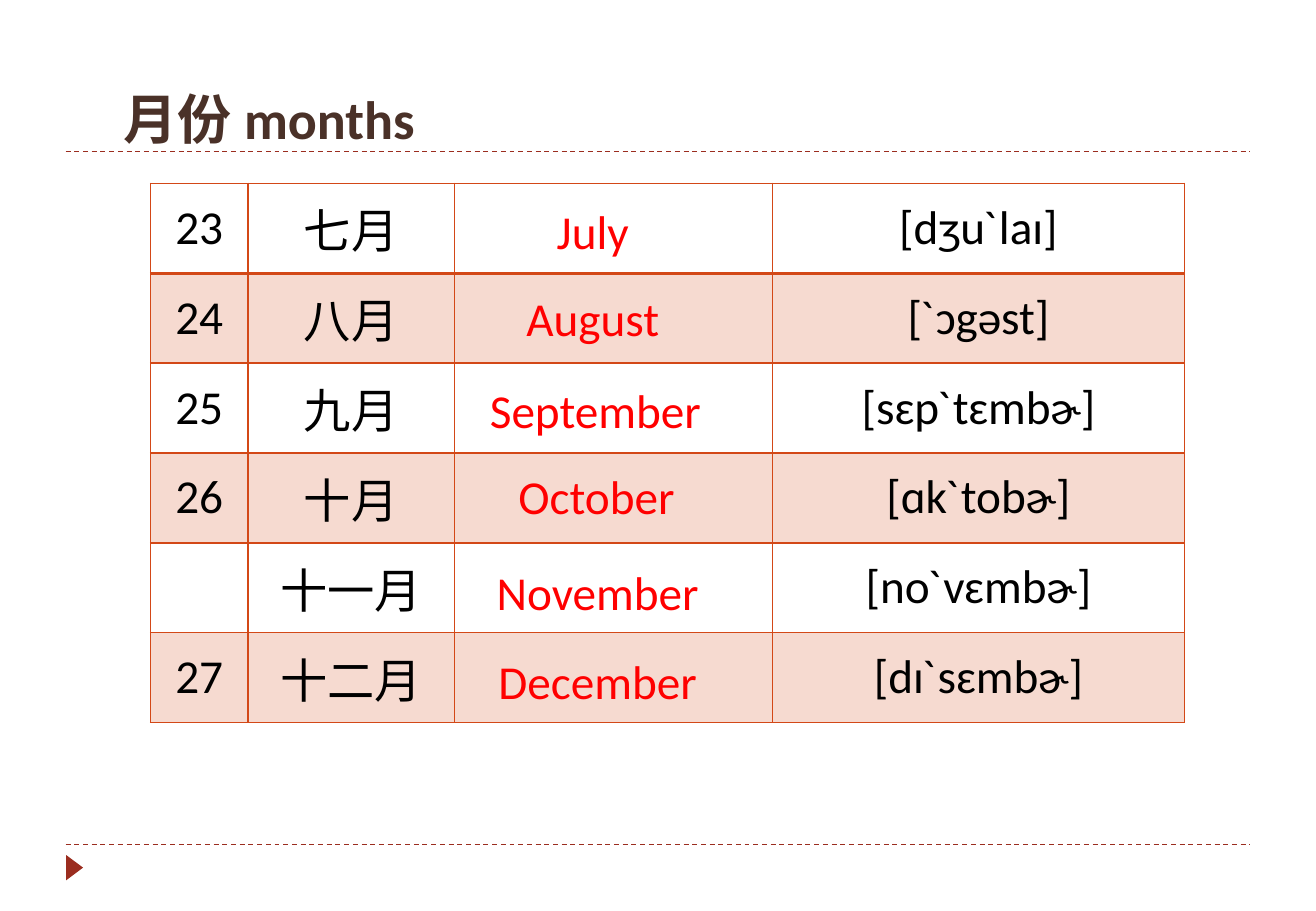
from lxml import etree
from pptx import Presentation
from pptx import util as u
from pptx.dml.color import RGBColor
from pptx.enum import dml, shapes, text
from pptx.oxml import parse_xml
from pptx.oxml.ns import nsdecls, qn

Pt = u.Pt
BRICK = RGBColor(0x9B, 0x2D, 0x1F)
ORANGE = RGBColor(0xD3, 0x48, 0x17)
BROWN = RGBColor(0x4A, 0x31, 0x28)
RED = RGBColor(0xFF, 0x00, 0x00)
BLACK = RGBColor(0x00, 0x00, 0x00)
LATIN, HAN = "Calibri", "Noto Sans CJK SC"

MONTHS = [
    ("23", "七月", "[dʒuˋlaɪ]"),
    ("24", "八月", "[ˋɔgəst]"),
    ("25", "九月", "[sɛpˋtɛmbɚ]"),
    ("26", "十月", "[ɑkˋtobɚ]"),
    ("", "十一月", "[noˋvɛmbɚ]"),
    ("27", "十二月", "[dɪˋsɛmbɚ]"),
]
ANSWERS = [
    ("July", 181.4, 7.9),
    ("August", 181.4, 5.8),
    ("September", 182.9, 7.2),
    ("October", 183.6, 5),
    ("November", 184.3, 8.6),
    ("December", 184.3, 7.9),
]
COLS = (57.6, 122.4, 188.6, 244.1)
ROW_H = 53.28


def style(font, size, color, name, bold=False):
    """Set a font, with its East Asian face."""
    font.size, font.bold, font.name = Pt(size), bold, name
    font.color.rgb = color
    etree.SubElement(font._element, qn("a:ea")).set("typeface", name)


def dashed_rule(s, x, y, w):
    """Draw a thin dashed horizontal line."""
    c = s.shapes.add_connector(shapes.MSO_CONNECTOR.STRAIGHT, Pt(x), Pt(y), Pt(x + w), Pt(y))
    c.line.color.rgb, c.line.width = BRICK, Pt(0.75)
    c.line.dash_style = dml.MSO_LINE.DASH
    etree.SubElement(c._element.spPr, qn("a:effectLst"))


def frame(s, x, y, w, h):
    """Draw the two rules and the corner marker."""
    dashed_rule(s, x, y, w)
    dashed_rule(s, x, y + h, w)
    sp = s.shapes.add_shape(shapes.MSO_SHAPE.ISOSCELES_TRIANGLE,
                            Pt(x - 2.2), Pt(y + h + 8.9), Pt(15), Pt(10))
    sp.rotation = 90
    sp.shadow.inherit = False
    sp.fill.solid()
    sp.fill.fore_color.rgb = BRICK
    sp.line.fill.background()


def title(s, x, y, w, h):
    """Write the bilingual heading at the bottom of its box."""
    tf = s.shapes.add_textbox(Pt(x), Pt(y), Pt(w), Pt(h)).text_frame
    tf.word_wrap = True
    tf.vertical_anchor = text.MSO_ANCHOR.BOTTOM
    tf.margin_left = Pt(28.7)
    for words, name in (("月份 ", HAN), ("months", LATIN)):
        r = tf.paragraphs[0].add_run()
        r.text = words
        style(r.font, 32, BROWN, name, True)


def cell_look(cell, banded, bottom):
    """Set the borders and the fill of one cell."""
    tcPr = cell._tc.get_or_add_tcPr()
    for side in "LRTB":
        width = Pt(bottom if side == "B" else 1)
        tcPr.append(parse_xml(
            f'<a:ln{side} {nsdecls("a")} w="{width}"><a:solidFill>'
            f'<a:srgbClr val="{ORANGE}"/></a:solidFill></a:ln{side}>'))
    if banded:
        cell.fill.solid()
        cell.fill.fore_color.rgb = ORANGE
        color = tcPr.find(qn("a:solidFill"))[0]
        etree.SubElement(color, qn("a:alpha")).set("val", "20000")
    else:
        cell.fill.background()


def month_table(s, x, y):
    """Fill the table of numbers, months and pronunciations."""
    gf = s.shapes.add_table(len(MONTHS), len(COLS), Pt(x), Pt(y),
                            Pt(sum(COLS)), Pt(ROW_H * len(MONTHS)))
    tbl = gf.table
    tbl.first_row = tbl.horz_banding = False
    for col, w in zip(tbl.columns, COLS):
        col.width = Pt(w)
    for i, (number, month, sound) in enumerate(MONTHS):
        tbl.rows[i].height = Pt(ROW_H)
        for j, words in enumerate((number, month, "", sound)):
            cell = tbl.cell(i, j)
            cell_look(cell, i % 2 == 1, 2 if i == 0 else 1)
            cell.vertical_anchor = text.MSO_ANCHOR.MIDDLE
            cell.margin_left = cell.margin_right = Pt(5)
            cell.margin_top = cell.margin_bottom = 0
            p = cell.text_frame.paragraphs[0]
            p.text = words
            p.alignment = text.PP_ALIGN.CENTER
            style(p.font, 28, BLACK, HAN if j == 1 else LATIN)


def answers(s, x, y):
    """Lay the English month names over the third column."""
    for i, (word, dx, dy) in enumerate(ANSWERS):
        tf = s.shapes.add_textbox(Pt(x + dx), Pt(y + i * ROW_H + dy), Pt(161.3), Pt(41)).text_frame
        tf.word_wrap = True
        tf.auto_size = text.MSO_AUTO_SIZE.SHAPE_TO_FIT_TEXT
        p = tf.paragraphs[0]
        p.text = word
        p.alignment = text.PP_ALIGN.CENTER
        style(p.font, 28, RED, LATIN)


def main():
    """Build the months slide."""
    prs = Presentation()
    prs.slide_width, prs.slide_height = Pt(780), Pt(540)
    s = prs.slides.add_slide(prs.slide_layouts[6])
    frame(s, 38.9, 90, 702, 410.4)
    month_table(s, 89.3, 108.7)
    answers(s, 89.3, 108.7)
    title(s, 44.6, 20.9, 702, 72)
    prs.save("out.pptx")


if __name__ == "__main__":
    main()
